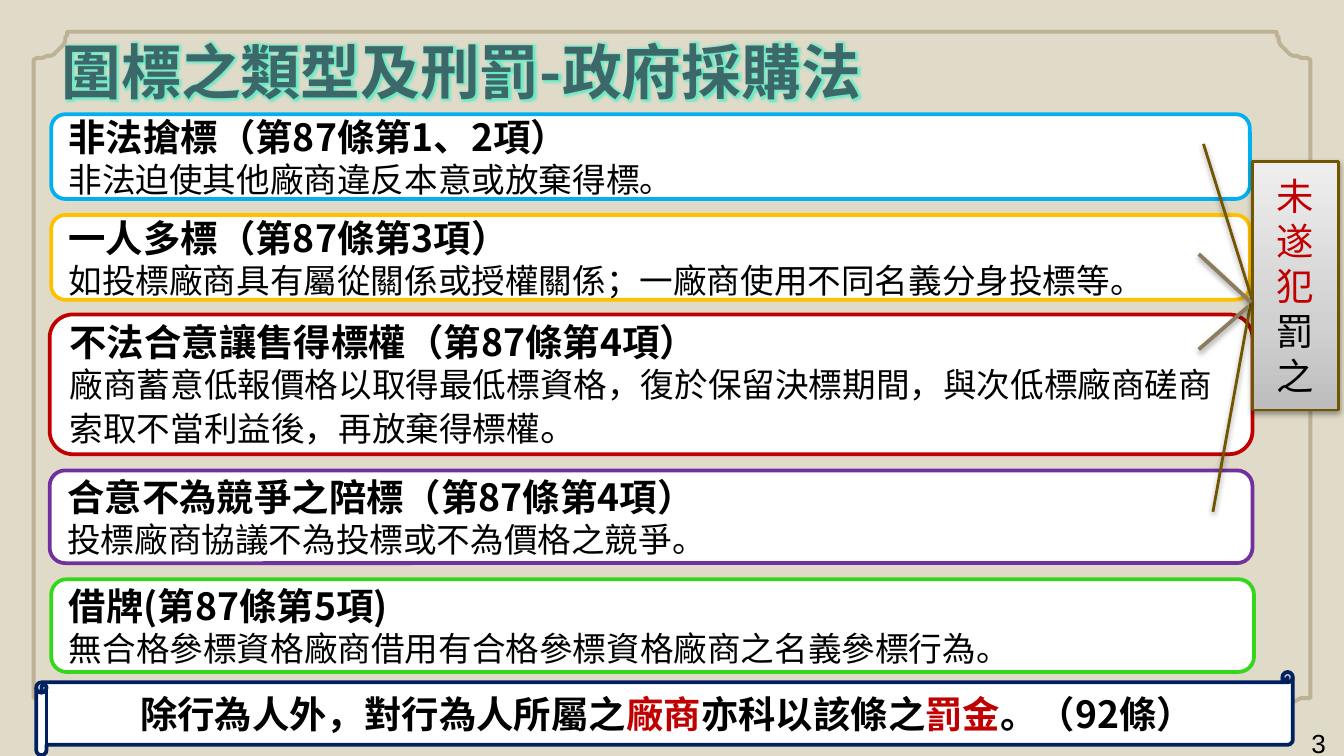
import math
import lxml.etree
import pptx
import pptx.util
import pptx.dml.color
import pptx.enum.shapes
import pptx.enum.text
import pptx.oxml
import pptx.oxml.ns

Pt = pptx.util.Pt
SHAPE = pptx.enum.shapes.MSO_SHAPE
ALIGN = pptx.enum.text.PP_ALIGN
NS = 'xmlns:a="http://schemas.openxmlformats.org/drawingml/2006/main"'
CJK = "Noto Sans CJK SC"
BLACK, RED, WHITE = "000000", "C00000", "FFFFFF"
SHADOW = (
    f'<a:effectLst {NS}><a:outerShdw blurRad="{Pt(3.1)}" dist="{Pt(1.6)}" dir="5400000" '
    'rotWithShape="0"><a:srgbClr val="000000"><a:alpha val="38000"/></a:srgbClr>'
    "</a:outerShdw></a:effectLst>"
)
GLOW = (
    f'<a:effectLst {NS}><a:glow rad="{Pt(4)}"><a:srgbClr val="4DEFC4">'
    '<a:alpha val="80000"/></a:srgbClr></a:glow></a:effectLst>'
)


def color(value):
    return pptx.dml.color.RGBColor.from_string(value)


def add_run(paragraph, text, size, ink=BLACK, bold=False, font=CJK):
    run = paragraph.add_run()
    run.text = text
    run.font.size = Pt(size)
    run.font.bold = bold
    run.font.color.rgb = color(ink)
    run.font.name = font
    east_asian = lxml.etree.SubElement(run.font._element, pptx.oxml.ns.qn("a:ea"))
    east_asian.set("typeface", font)
    return run


def set_line(part, ink, width):
    part.line.color.rgb = color(ink)
    part.line.width = Pt(width)


def add_panel(slide, preset, box, ink, width=2):
    panel = slide.shapes.add_shape(preset, *map(Pt, box))
    panel.shadow.inherit = False
    panel.fill.solid()
    panel.fill.fore_color.rgb = color(WHITE)
    set_line(panel, ink, width)
    panel.text_frame.word_wrap = True
    panel.text_frame.vertical_anchor = pptx.enum.text.MSO_ANCHOR.MIDDLE
    panel.text_frame.paragraphs[0].alignment = ALIGN.LEFT
    return panel


def add_label(slide, box, text, size, **style):
    label = slide.shapes.add_textbox(*map(Pt, box))
    label.text_frame.word_wrap = True
    return add_run(label.text_frame.paragraphs[0], text, size, **style)


def add_frame(slide, box):
    left, top, width, height = box
    notch_x, notch_y = 18, 15
    corners = [(left + width, top), (left, top), (left, top + height), (left + width, top + height)]
    points = []
    for corner, (x, y) in enumerate(corners):
        for step in range(13):
            angle = math.radians(90 - 90 * corner + 90 * (1 - step / 12) - 0)
            angle = math.radians(90 + 7.5 * step - 90 * corner)
            points.append((x + notch_x * math.cos(angle), y + notch_y * math.sin(angle)))
    return points


def add_notched_frame(slide, box):
    left, top, width, height = box
    notch_x, notch_y = 18, 15
    corners = [(left, top, 90), (left + width, top, 180),
               (left + width, top + height, 270), (left, top + height, 360)]
    points = [
        (x + notch_x * math.cos(math.radians(start - 7.5 * step)),
         y + notch_y * math.sin(math.radians(start - 7.5 * step)))
        for x, y, start in corners
        for step in range(13)
    ]
    builder = slide.shapes.build_freeform(*points[0], scale=Pt(1))
    builder.add_line_segments(points[1:], close=True)
    frame = builder.convert_to_shape()
    frame.shadow.inherit = False
    frame.fill.background()
    set_line(frame, "BEB296", 2.12)


def add_offence(slide, box, ink, heading, details):
    panel = add_panel(slide, SHAPE.ROUNDED_RECTANGLE, box, ink)
    add_run(panel.text_frame.paragraphs[0], heading, 20, bold=True)
    paragraph = panel.text_frame.add_paragraph()
    paragraph.alignment = ALIGN.LEFT
    for text, size in details:
        add_run(paragraph, text, size)


def add_attempt_callout(slide, box):
    left, top = box[:2]
    callout = add_panel(slide, SHAPE.LINE_CALLOUT_2, box, "715500", 1.5)
    for index, value in enumerate([-0.07, -0.57, 0.55, -0.01, 1.41, -0.46]):
        callout.adjustments[index] = value
    stops = "".join(
        f'<a:gs pos="{position * 1000}"><a:srgbClr val="{ink}"/></a:gs>'
        for position, ink in [(0, "BDBDBD"), (35, "D1D1D1"), (100, "EEEEEE")]
    )
    properties = callout._element.spPr
    properties.replace(
        properties.find(pptx.oxml.ns.qn("a:solidFill")),
        pptx.oxml.parse_xml(f'<a:gradFill {NS} rotWithShape="1"><a:gsLst>{stops}</a:gsLst>'
                            '<a:lin ang="16200000" scaled="0"/></a:gradFill>'),
    )
    properties.replace(properties.find(pptx.oxml.ns.qn("a:effectLst")), pptx.oxml.parse_xml(SHADOW))
    paragraph = callout.text_frame.paragraphs[0]
    paragraph.alignment = ALIGN.CENTER
    add_run(paragraph, "未遂犯", 20, RED)
    add_run(paragraph, "罰之", 20)

    for start_x, start_y, end_x, end_y in [(-28.8, 49.7, -0.7, 75.6), (-28.8, 100.8, -2.2, 77.8)]:
        pointer = slide.shapes.add_connector(
            pptx.enum.shapes.MSO_CONNECTOR.STRAIGHT,
            Pt(left + start_x), Pt(top + start_y), Pt(left + end_x), Pt(top + end_y))
        set_line(pointer, "8A7C5C", 2)
        pointer._element.spPr.append(pptx.oxml.parse_xml(SHADOW))


def add_fine_scroll(slide, box):
    scroll = add_panel(slide, SHAPE.HORIZONTAL_SCROLL, box, "002060")
    paragraph = scroll.text_frame.paragraphs[0]
    paragraph.alignment = ALIGN.CENTER
    parts = ["除行為人外，對行為人所屬之", "廠商", "亦科以該條之", "罰金", "。（92條）"]
    for index, text in enumerate(parts):
        add_run(paragraph, text, 20, RED if index % 2 else BLACK, bold=True)


OFFENCES = [
    ((27.4, 61.2, 642.2, 45.4), "00B0F0", "非法搶標（第87條第1、2項）",
     [("非法迫使其他廠商違反本意或放棄得標。", 18)]),
    ((27.4, 115.2, 642.2, 45.4), "FFC000", "一人多標（第87條第3項）",
     [("如投標廠商具有屬從關係或授權關係；一廠商使用不同名義分身投標等。", 18)]),
    ((26.6, 168.5, 644.4, 74.9), RED, "不法合意讓售得標權（第87條第4項）",
     [("廠商蓄意低報價格以取得最低標資格，復於保留決標期間，與次低標廠商磋商索取不當利益後，再放棄得標權", 18),
      ("。", 20)]),
    ((26.6, 252, 644.4, 49.7), "7030A0", "合意不為競爭之陪標（第87條第4項）",
     [("投標廠商協議不為投標或不為價格之競爭。", 18)]),
    ((27.4, 310.3, 644.4, 49.7), "34D719", "借牌(第87條第5項)",
     [("無合格參標資格廠商借用有合格參標資格廠商之名義參標行為。", 18)]),
]


def main():
    deck = pptx.Presentation()
    deck.slide_width, deck.slide_height = Pt(720), Pt(405)
    slide = deck.slides.add_slide(deck.slide_layouts[6])
    slide.background.fill.solid()
    slide.background.fill.fore_color.rgb = color("E0DAC8")

    add_label(slide, (695.5, 385.9, 72, 24.5), "3", 14, font="Arial")
    add_notched_frame(slide, (18, 16.6, 684, 372.2))
    title = add_label(slide, (25.9, 15.1, 753.8, 46.1), "圍標之類型及刑罰-政府採購法", 32,
                      ink="3D6869", bold=True)
    title.font._element.find(pptx.oxml.ns.qn("a:solidFill")).addnext(pptx.oxml.parse_xml(GLOW))
    for offence in OFFENCES:
        add_offence(slide, *offence)
    add_attempt_callout(slide, (671, 86.4, 46.1, 133.2))
    add_fine_scroll(slide, (19.4, 360, 673.2, 44.6))
    deck.save("out.pptx")


if __name__ == "__main__":
    main()
